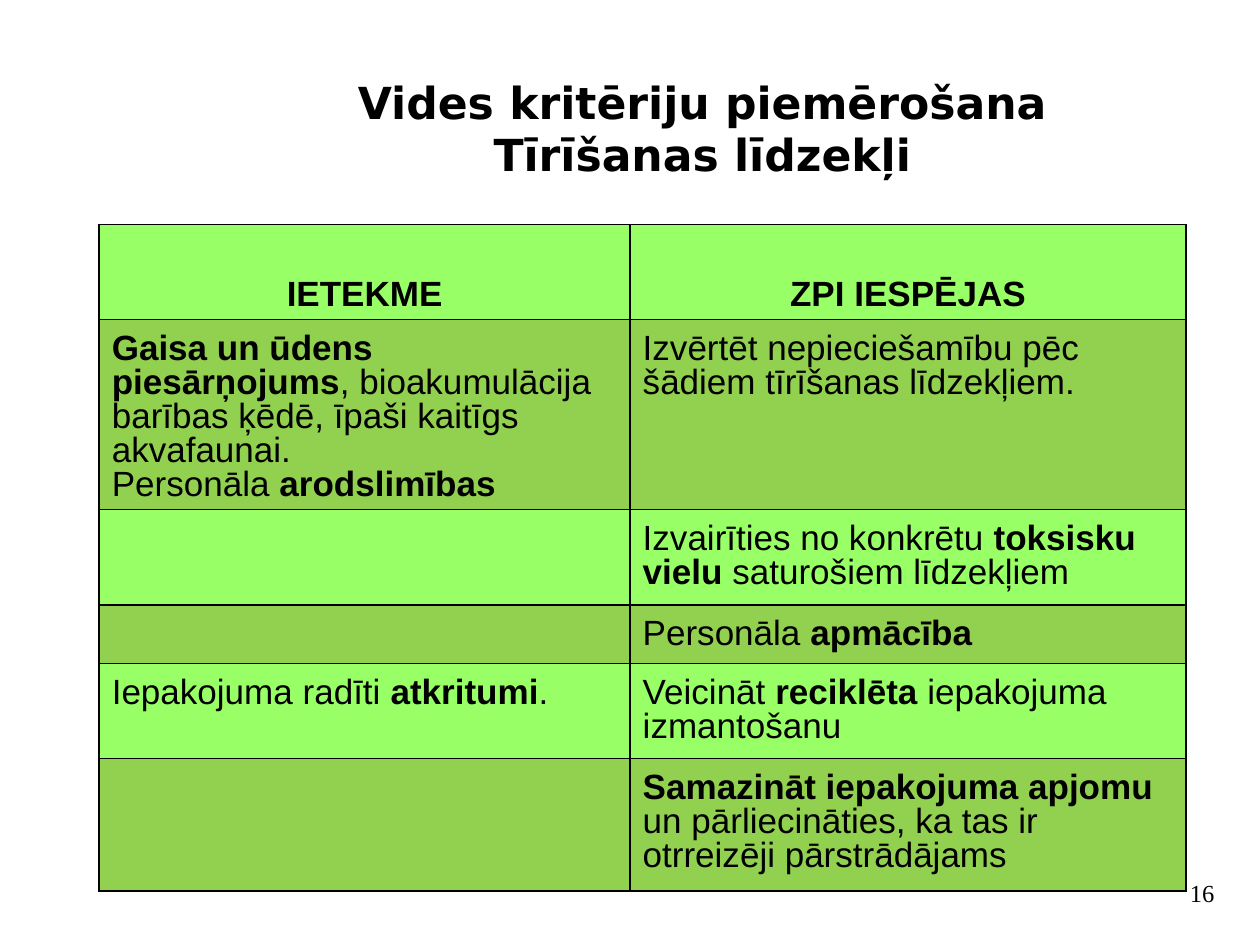
from dataclasses import dataclass

from lxml.etree import SubElement
from pptx import Presentation
from pptx.dml.color import RGBColor
from pptx.enum.text import MSO_ANCHOR as Anchor, PP_ALIGN as Align
from pptx.oxml.ns import qn
from pptx.util import Pt


@dataclass(frozen=True)
class Theme:
    ink: str = "000000"
    bands: tuple = ("99FF66", "92D050")
    title_size: float = 25.2
    table_size: float = 20
    number_size: float = 14


theme = Theme()


def write(frame, paragraphs, *, font, size, align=Align.LEFT, anchor=Anchor.TOP,
          insets=(7.2, 3.6, 7.2, 3.6), spacing=1.0):
    frame.word_wrap = True
    frame.vertical_anchor = anchor
    frame.margin_left, frame.margin_top, frame.margin_right, frame.margin_bottom = map(Pt, insets)
    for index, text in enumerate(paragraphs):
        paragraph = frame.add_paragraph() if index else frame.paragraphs[0]
        paragraph.alignment = align
        paragraph.line_spacing = spacing
        for part, words in enumerate(text.split("**")):
            for line_number, line in enumerate(words.split("\n")):
                if line_number:
                    paragraph.add_line_break()
                if line:
                    run = paragraph.add_run()
                    run.text = line
                    run.font.name = font
                    run.font.size = Pt(size)
                    run.font.bold = part % 2 == 1
                    run.font.color.rgb = RGBColor.from_string(theme.ink)


def draw_borders(cell):
    properties = cell._tc.get_or_add_tcPr()
    for position, side in enumerate(("lnL", "lnR", "lnT", "lnB")):
        line = properties.makeelement(qn(f"a:{side}"), {"w": str(Pt(1))})
        properties.insert(position, line)
        fill = SubElement(line, qn("a:solidFill"))
        SubElement(fill, qn("a:srgbClr"), val=theme.ink)


deck = Presentation()
deck.slide_width, deck.slide_height = Pt(720), Pt(540)
slide = deck.slides.add_slide(deck.slide_layouts[5])

title = slide.shapes.title
title.left, title.top, title.width, title.height = Pt(161.3), Pt(37.4), Pt(480.2), Pt(56.9)
write(title.text_frame, ["**Vides kritēriju piemērošana\nTīrīšanas līdzekļi**"],
      font="DejaVu Sans", size=theme.title_size, align=Align.CENTER, insets=(7.2, 5.4, 7.2, 3.6))

criteria = [
    (["**IETEKME**"], ["**ZPI IESPĒJAS**"]),
    (["**Gaisa un ūdens piesārņojums**, bioakumulācija barības ķēdē, īpaši kaitīgs akvafaunai.",
      "Personāla **arodslimības**"],
     ["Izvērtēt nepieciešamību pēc šādiem tīrīšanas līdzekļiem."]),
    ([], ["Izvairīties no konkrētu **toksisku vielu **saturošiem līdzekļiem"]),
    ([], ["Personāla **apmācība**"]),
    (["Iepakojuma radīti **atkritumi**."], ["Veicināt **reciklēta** iepakojuma izmantošanu"]),
    ([], ["**Samazināt iepakojuma apjomu **un pārliecināties, ka tas ir otrreizēji pārstrādājams"]),
]
column_widths = (303.4, 317.6)
row_heights = (54.4, 96.5, 54.4, 33.4, 54.4, 75.6)

impact_table = slide.shapes.add_table(
    len(row_heights), len(column_widths), Pt(56.7), Pt(128.2),
    Pt(sum(column_widths)), Pt(sum(row_heights))).table
for column, width in zip(impact_table.columns, column_widths):
    column.width = Pt(width)

for row_index, (height, entries) in enumerate(zip(row_heights, criteria)):
    impact_table.rows[row_index].height = Pt(height)
    is_header = row_index == 0
    for column_index, paragraphs in enumerate(entries):
        cell = impact_table.cell(row_index, column_index)
        cell.fill.solid()
        cell.fill.fore_color.rgb = RGBColor.from_string(theme.bands[row_index % 2])
        draw_borders(cell)
        write(cell.text_frame, paragraphs, font="Arial", size=theme.table_size, spacing=0.87,
              align=Align.CENTER if is_header else Align.LEFT)
        cell.vertical_anchor = Anchor.BOTTOM if is_header else Anchor.TOP
        cell.margin_left = cell.margin_right = Pt(7.2)
        cell.margin_top, cell.margin_bottom = Pt(7.9), Pt(3.6)

page_number = slide.shapes.add_textbox(Pt(671.8), Pt(498.2), Pt(30.2), Pt(23.8))
write(page_number.text_frame, ["16"], font="Times New Roman", size=theme.number_size,
      align=Align.CENTER, anchor=Anchor.MIDDLE)

deck.save("out.pptx")
